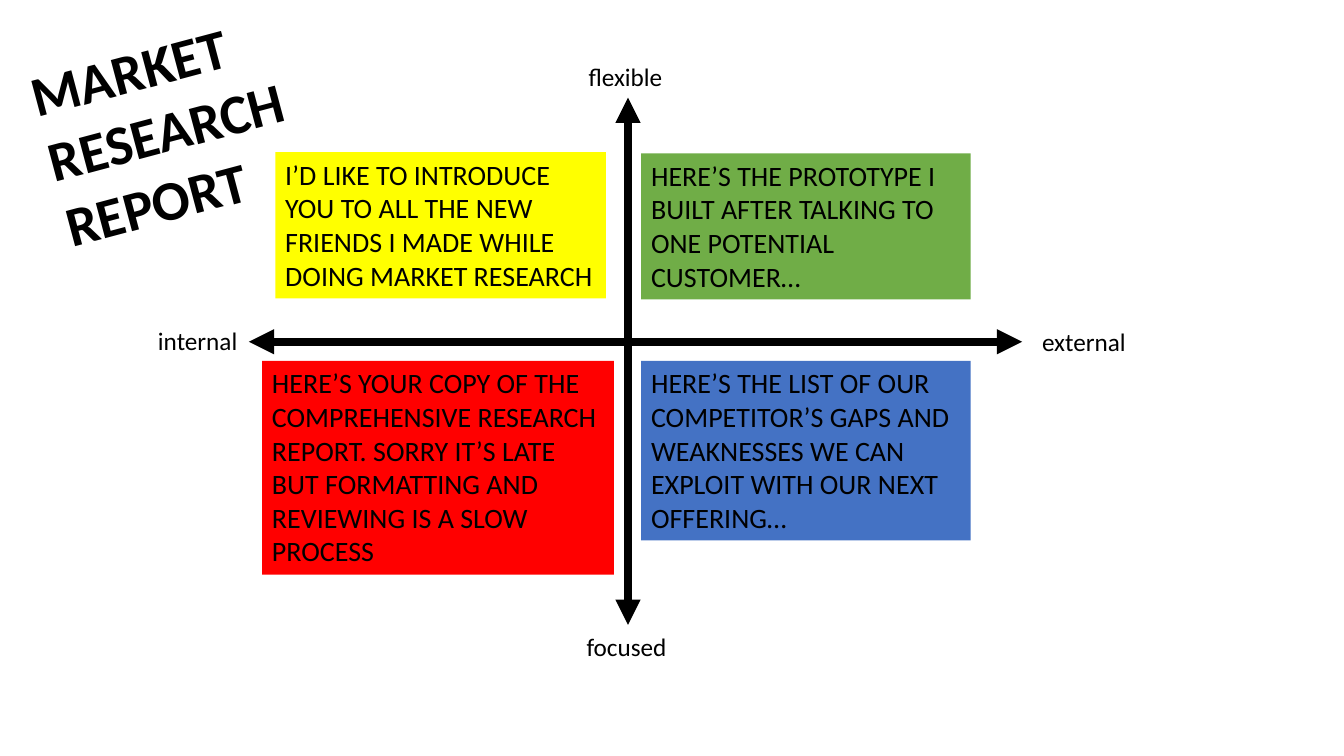
from lxml import etree
from pptx import Presentation
from pptx.dml.color import RGBColor
from pptx.enum.shapes import MSO_CONNECTOR, MSO_SHAPE
from pptx.enum.text import MSO_ANCHOR, MSO_AUTO_SIZE, PP_ALIGN
from pptx.oxml.ns import qn
from pptx.util import Pt

LINE = MSO_CONNECTOR.STRAIGHT
RECT = MSO_SHAPE.RECTANGLE
TOP = MSO_ANCHOR.TOP
GROW = MSO_AUTO_SIZE.SHAPE_TO_FIT_TEXT
LEFT = PP_ALIGN.LEFT

BLACK = RGBColor(0x00, 0x00, 0x00)
GREEN = RGBColor(0x70, 0xAD, 0x47)
YELLOW = RGBColor(0xFF, 0xFF, 0x00)
RED = RGBColor(0xFF, 0x00, 0x00)
BLUE = RGBColor(0x44, 0x72, 0xC4)

FONT = "Calibri"
TITLE = ["MARKET", "RESEARCH", "REPORT"]

# Text, fill, then left, top, width and height from the axis crossing
CARDS = [
    ("HERE’S THE PROTOTYPE I BUILT AFTER TALKING TO ONE POTENTIAL CUSTOMER…",
     GREEN, (9.4, -134.6, 235.4, 104.4)),
    ("I’D LIKE TO INTRODUCE YOU TO ALL THE NEW FRIENDS I MADE WHILE "
     "DOING MARKET RESEARCH",
     YELLOW, (-252, -135.4, 236.2, 104.4)),
    ("HERE’S YOUR COPY OF THE COMPREHENSIVE RESEARCH REPORT. SORRY IT’S LATE "
     "BUT FORMATTING AND REVIEWING IS A SLOW PROCESS",
     RED, (-261.4, 13.7, 251.3, 152.6)),
    ("HERE’S THE LIST OF OUR COMPETITOR’S GAPS AND WEAKNESSES WE CAN EXPLOIT "
     "WITH OUR NEXT OFFERING…",
     BLUE, (9.4, 13.7, 235.4, 128.2)),
]


def write(shape, lines, size, bold=False, wrap=True):
    frame = shape.text_frame
    frame.word_wrap = wrap
    frame.auto_size = GROW
    frame.vertical_anchor = TOP
    for i, line in enumerate(lines):
        para = frame.paragraphs[0] if i == 0 else frame.add_paragraph()
        para.alignment = LEFT
        run = para.add_run()
        run.text = line
        run.font.name = FONT
        run.font.size = Pt(size)
        run.font.bold = bold
        run.font.color.rgb = BLACK


def add_label(slide, box, lines, size=18, bold=False):
    label = slide.shapes.add_textbox(*map(Pt, box))
    write(label, lines, size, bold, wrap=False)
    return label


def add_axis(slide, start, end):
    """Draw a thick line with an arrowhead at both ends."""
    axis = slide.shapes.add_connector(LINE, *map(Pt, start + end))
    axis.line.color.rgb = BLACK
    axis.line.width = Pt(6)
    stroke = axis.line._get_or_add_ln()
    for tip in ("a:headEnd", "a:tailEnd"):
        etree.SubElement(stroke, qn(tip)).set("type", "triangle")
    etree.SubElement(axis._element.spPr, qn("a:effectLst"))


def add_axes(slide, box, mid):
    """Cross two axes at mid inside the box and name their ends."""
    left, top, width, height = box
    right, base = left + width, top + height
    x, y = mid
    add_axis(slide, (left, y), (right, y))
    add_label(slide, (left - 72, y - 15, 72, 29), ["internal"])
    add_label(slide, (right + 7.2, y - 14.3, 75, 29), ["external"])
    add_axis(slide, (x, base), (x, top))
    add_label(slide, (x - 35.3, top - 29.5, 68, 29), ["flexible"])
    add_label(slide, (x - 36.7, base + 0.7, 72, 29), ["focused"])


def add_cards(slide, mid):
    x, y = mid
    for text, fill, (left, top, width, height) in CARDS:
        box = (x + left, y + top, width, height)
        card = slide.shapes.add_shape(RECT, *map(Pt, box))
        card.shadow.inherit = False
        card.fill.solid()
        card.fill.fore_color.rgb = fill
        card.line.fill.background()
        write(card, [text], 20)


def add_title(slide, box):
    title = add_label(slide, box, TITLE, 40, True)
    title.rotation = 345.1


def main():
    deck = Presentation()
    deck.slide_width, deck.slide_height = Pt(960), Pt(540)
    slide = deck.slides.add_slide(deck.slide_layouts[6])
    mid = (448.6, 244.1)
    add_axes(slide, (177.8, 69.8, 552.3, 376.6), mid)
    add_cards(slide, mid)
    add_title(slide, (25.2, 15.8, 197.3, 152.6))
    deck.save("out.pptx")


if __name__ == "__main__":
    main()
